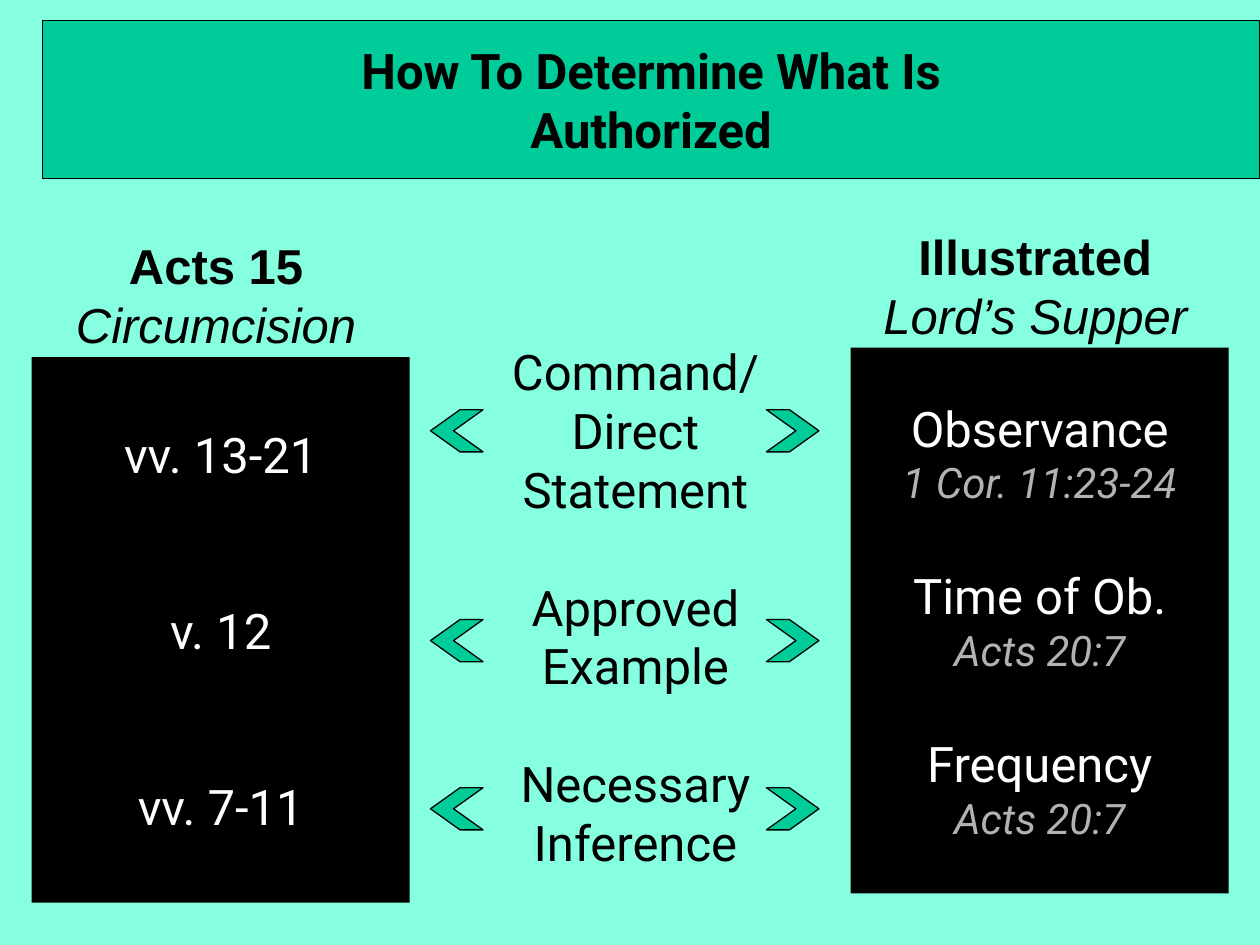
from pptx import Presentation
from pptx.dml.color import RGBColor
from pptx.enum.shapes import MSO_SHAPE
from pptx.enum.text import MSO_ANCHOR, MSO_AUTO_SIZE, PP_ALIGN
from pptx.oxml.ns import qn
from pptx.util import Cm, Pt
from lxml.etree import SubElement

COLORS = {
    "mint": "85FFE0",
    "green": "00CC99",
    "black": "000000",
    "white": "FFFFFF",
    "gray": "B2B2B2",
}

FORMATS = {
    "title": {"name": "Roboto", "size": Pt(28), "bold": True, "color": "black"},
    "method": {"name": "Roboto", "size": Pt(28), "color": "black"},
    "point": {"name": "Roboto", "size": Pt(28), "color": "white"},
    "verse": {"name": "Roboto", "size": Pt(24), "italic": True, "color": "gray"},
    "heading": {"name": "Arial", "size": Pt(28), "bold": True, "color": "black"},
    "subject": {"name": "Arial", "size": Pt(28), "italic": True, "color": "black"},
}

LINE = 33.5


class Page:
    def __init__(self, deck):
        self.slide = deck.slides.add_slide(deck.slide_layouts[5])
        background = self.slide.background.fill
        background.solid()
        background.fore_color.rgb = self.color("mint")

    def color(self, name):
        return RGBColor.from_string(COLORS[name])

    def paint(self, shape, fill, outlined):
        shape.fill.solid()
        shape.fill.fore_color.rgb = self.color(fill)
        if outlined:
            shape.line.color.rgb = self.color("black")
            shape.line.width = Pt(0.75)
        else:
            shape.line.fill.background()

    def fill_text(self, shape, groups, styles, gap=0, wrap=False,
                  anchor=MSO_ANCHOR.MIDDLE, size=MSO_AUTO_SIZE.NONE):
        frame = shape.text_frame
        frame.word_wrap = wrap
        frame.auto_size = size
        frame.vertical_anchor = anchor
        lines = [(text, style, gap if group and not index else 0)
                 for group, texts in enumerate(groups)
                 for index, (text, style) in enumerate(zip(texts, styles))]
        for number, (text, style, space) in enumerate(lines):
            para = frame.add_paragraph() if number else frame.paragraphs[0]
            para.alignment = PP_ALIGN.CENTER
            para.space_before = Pt(space)
            span = para.add_run()
            span.text = text
            for key, value in FORMATS[style].items():
                if key == "color":
                    span.font.color.rgb = self.color(value)
                else:
                    setattr(span.font, key, value)

    def title(self, lines, left, top, width, height):
        box = self.slide.shapes.title
        box.left, box.top, box.width, box.height = map(Cm, (left, top, width, height))
        geometry = SubElement(box.element.spPr, qn("a:prstGeom"), prst="ellipse")
        SubElement(geometry, qn("a:avLst"))
        self.paint(box, "green", True)
        self.fill_text(box, [lines], ["title"] * len(lines))

    def text(self, groups, styles, left, top, width, height, **options):
        box = self.slide.shapes.add_textbox(*map(Cm, (left, top, width, height)))
        self.fill_text(box, groups, styles, anchor=MSO_ANCHOR.TOP,
                       size=MSO_AUTO_SIZE.SHAPE_TO_FIT_TEXT, **options)

    def shape(self, kind, fill, outlined, left, top, width, height):
        shape = self.slide.shapes.add_shape(kind, *map(Cm, (left, top, width, height)))
        shape.shadow.inherit = False
        self.paint(shape, fill, outlined)
        return shape

    def chevron(self, left, top, flipped):
        shape = self.shape(MSO_SHAPE.CHEVRON, "green", True, left, top, 1.06, 0.85)
        shape.adjustments[0] = 0.7
        if flipped:
            shape.element.spPr.get_or_add_xfrm().set("flipH", "1")

    def panel(self, groups, styles, gap, left, top):
        box = self.shape(MSO_SHAPE.RECTANGLE, "black", False, left, top, 7.62, 11)
        self.fill_text(box, groups, styles, gap)


def main():
    deck = Presentation()
    deck.slide_width, deck.slide_height = Cm(25.4), Cm(19.05)
    page = Page(deck)

    page.title(["How To Determine What Is", "Authorized"], 0.85, 0.42, 24.55, 3.18)

    methods = [["Command/", "Direct", "Statement"],
               ["Approved", "Example"],
               ["Necessary", "Inference"]]
    page.text(methods, ["method"] * 3, 8.47, 6.77, 8.68, 10.92, gap=LINE, wrap=True)
    for left, flipped in ((15.45, False), (8.68, True)):
        for top in (8.26, 12.49, 15.88):
            page.chevron(left, top, flipped)

    page.panel([["vv. 13-21"], ["v. 12"], ["vv. 7-11"]], ["point"],
               2 * LINE, 0.64, 7.2)
    page.text([["Acts 15", "Circumcision"]], ["heading", "subject"],
              1.27, 4.62, 6.17, 2.62)

    page.panel([["Observance", "1 Cor. 11:23-24"],
                ["Time of Ob.", "Acts 20:7"],
                ["Frequency", "Acts 20:7"]], ["point", "verse"], LINE, 17.15, 7.01)
    page.text([["Illustrated", "Lord’s Supper"]], ["heading", "subject"],
              17.53, 4.44, 6.68, 2.62)

    deck.save("out.pptx")


if __name__ == "__main__":
    main()
